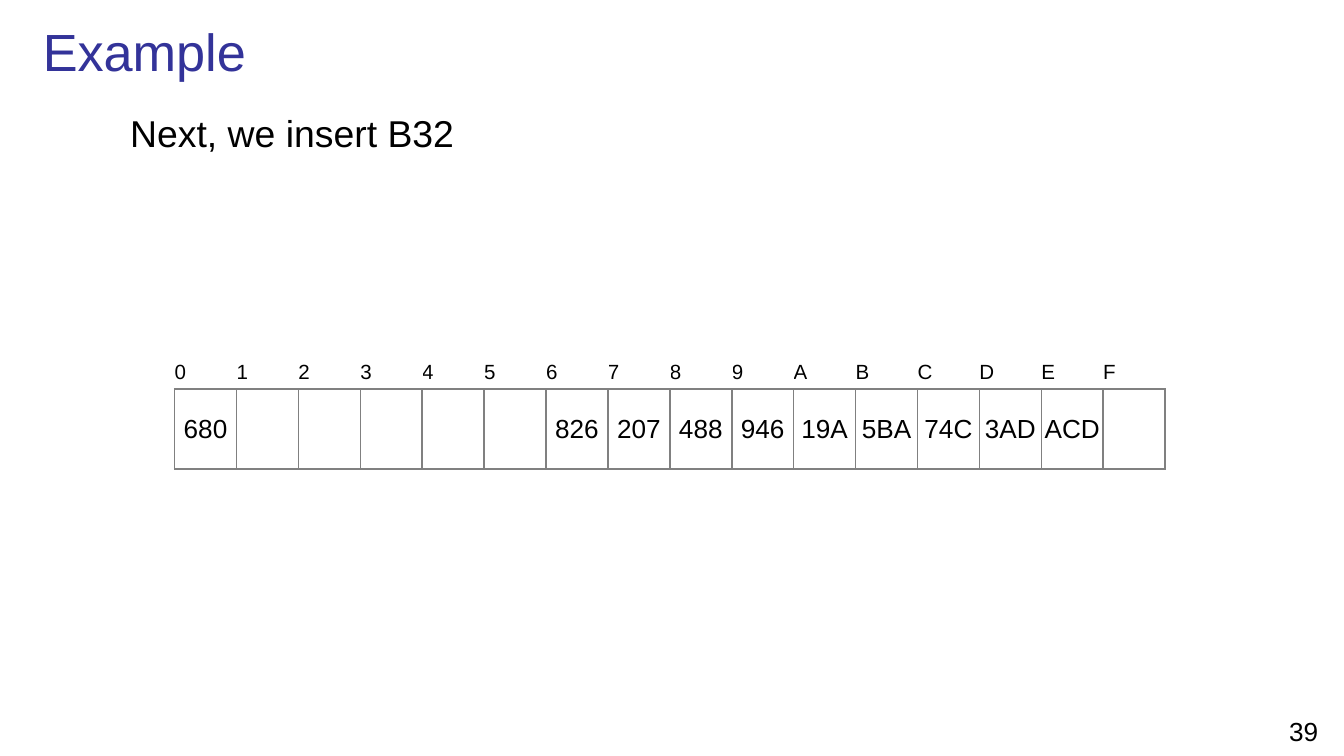
import pptx
import pptx.dml.color
import pptx.enum.text
import pptx.oxml
import pptx.oxml.ns
import pptx.util

Cm = pptx.util.Cm
Pt = pptx.util.Pt
Align = pptx.enum.text.PP_ALIGN
Anchor = pptx.enum.text.MSO_ANCHOR


def write_text(text_frame, text, size, color="000000", align=Align.LEFT):
    paragraph = text_frame.paragraphs[0]
    paragraph.alignment = align
    run = paragraph.add_run()
    run.text = text
    run.font.name = "Arial"
    run.font.size = Pt(size)
    run.font.color.rgb = pptx.dml.color.RGBColor.from_string(color)
    return paragraph


def draw_borders(cell, sides, color):
    properties = cell._tc.get_or_add_tcPr()
    for position, side in enumerate(sides):
        border = pptx.oxml.parse_xml(
            f'<a:ln{side} {pptx.oxml.ns.nsdecls("a")} w="{Pt(1)}">'
            f'<a:solidFill><a:srgbClr val="{color}"/></a:solidFill></a:ln{side}>'
        )
        properties.insert(position, border)


presentation = pptx.Presentation()
presentation.slide_width = Cm(25.4)
presentation.slide_height = Cm(14.29)
slide = presentation.slides.add_slide(presentation.slide_layouts[6])

page_number = slide.shapes.add_textbox(Cm(23.88), Cm(13.39), Cm(1.52), Cm(0.76))
page_number.text_frame.word_wrap = True
write_text(page_number.text_frame, "39", size=14, align=Align.CENTER)

body = slide.shapes.add_textbox(Cm(1.12), Cm(1.96), Cm(23.27), Cm(11.13))
body.text_frame.word_wrap = True
body_paragraph = write_text(body.text_frame, "Next, we insert B32", size=20)
body_paragraph.space_before = Pt(4)
body_paragraph._p.get_or_add_pPr().set("marL", str(Cm(1.09)))

title = slide.shapes.add_textbox(Cm(0.56), Cm(0.2), Cm(24.74), Cm(1.5))
title.text_frame.word_wrap = True
title.text_frame.vertical_anchor = Anchor.MIDDLE
write_text(title.text_frame, "Example", size=28, color="333399")

indices = "0123456789ABCDEF"
entries = {
    "0": "680", "6": "826", "7": "207", "8": "488", "9": "946",
    "A": "19A", "B": "5BA", "C": "74C", "D": "3AD", "E": "ACD",
}
column_width = Cm(1.17)
table = slide.shapes.add_table(
    2, len(indices), Cm(3.3), Cm(6.71), column_width * len(indices), Cm(2.16)
).table
table.first_row = False
table.horz_banding = False
table.rows[0].height = Cm(0.64)
table.rows[1].height = Cm(1.52)

for column, index in enumerate(indices):
    table.columns[column].width = column_width
    index_cell = table.cell(0, column)
    entry_cell = table.cell(1, column)
    for cell in (index_cell, entry_cell):
        cell.fill.background()
        cell.vertical_anchor = Anchor.MIDDLE
        cell.margin_left = cell.margin_right = 0
        cell.margin_top = cell.margin_bottom = 0
    write_text(index_cell.text_frame, index, size=11)
    draw_borders(index_cell, "B", "808080")
    if index in entries:
        write_text(entry_cell.text_frame, entries[index], size=14, align=Align.CENTER)
    draw_borders(entry_cell, "LRTB", "808080")

presentation.save("out.pptx")
